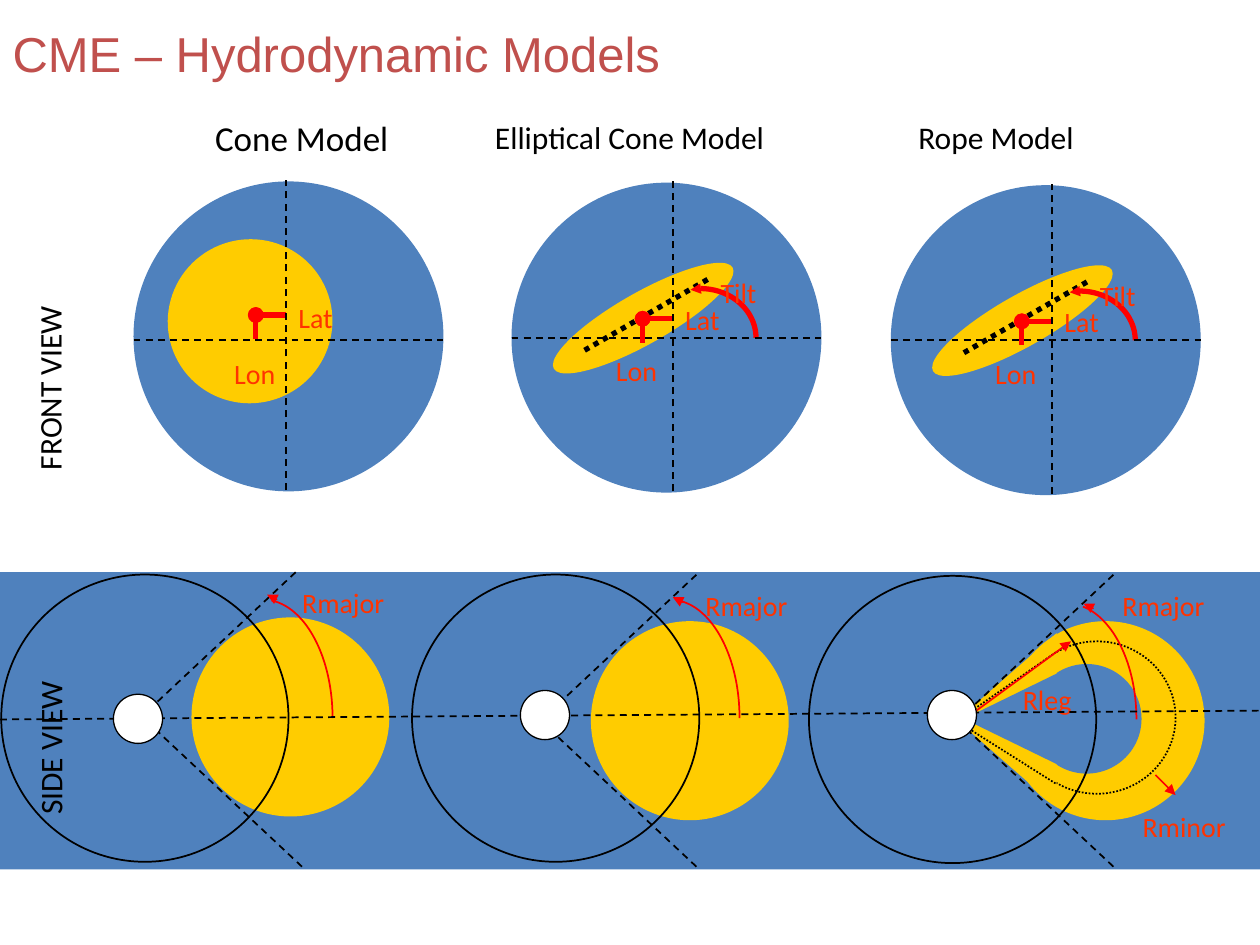
from lxml import etree
from pptx import Presentation
from pptx import util as u
from pptx.dml.color import RGBColor
from pptx.enum import dml, shapes, text
from pptx.oxml.ns import qn

BLUE, GOLD, RED, ORANGE = "4F81BD", "FFCC00", "FF0000", "FF3300"
BLACK, WHITE, BRICK = "000000", "FFFFFF", "C0504D"
DASH, DOTS = dml.MSO_LINE.DASH, dml.MSO_LINE.ROUND_DOT
KIND = shapes.MSO_SHAPE


def hue(code):
    return RGBColor.from_string(code)


def cm(*inches):
    """The layout grid is in inches; the slide gets its lengths in Cm."""
    return [u.Cm(2.54 * n) for n in inches]


class Board:
    font = "Calibri"

    def __init__(self, deck):
        self.slide = deck.slides.add_slide(deck.slide_layouts[5])
        self.items = self.slide.shapes

    def put(self, box, words, size, color, name=None, mid=False):
        frame = box.text_frame
        frame.word_wrap = True
        frame.vertical_anchor = (text.MSO_ANCHOR.MIDDLE if mid
                                 else text.MSO_ANCHOR.TOP)
        para = frame.paragraphs[0]
        para.alignment = text.PP_ALIGN.LEFT
        run = para.add_run()
        run.text = words
        style = {"size": u.Pt(size), "name": name or self.font, "bold": False}
        for key, value in style.items():
            setattr(run.font, key, value)
        run.font.color.rgb = hue(color)
        return para

    def title(self, words, *area):
        box = self.items.title
        for key, value in zip(("left", "top", "width", "height"), cm(*area)):
            setattr(box, key, value)
        self.put(box, words, 28, BRICK, "Arial", True)

    def label(self, words, x, y, w, h=0.3, size=16, color=ORANGE,
              turn=0, mid=False):
        box = self.items.add_textbox(*cm(x, y, w, h))
        box.rotation = turn
        return self.put(box, words, size, color, mid=mid)

    def stroke(self, line, color, width, dash=None):
        line.color.rgb = hue(color)
        line.width = u.Pt(width)
        if dash:
            line.dash_style = dash

    def shape(self, kind, x, y, w, h, fill=None, line=None, turn=0):
        item = self.items.add_shape(kind, *cm(x, y, w, h))
        item.shadow.inherit = False
        item.rotation = turn
        if fill:
            item.fill.solid()
            item.fill.fore_color.rgb = hue(fill)
        else:
            item.fill.background()
        if line:
            self.stroke(item.line, *line)
        else:
            item.line.fill.background()
        return item

    def disc(self, x, y, w, h=None, **look):
        return self.shape(KIND.OVAL, x, y, w, h or w, **look)

    def arc(self, x, y, rx, ry, start, width):
        """Arc around (x, y) from the start angle round to 3 o'clock."""
        item = self.shape(KIND.ARC, x - rx, y - ry, 2 * rx, 2 * ry,
                          line=(RED, width))
        item.adjustments[0] = 0.6 * start
        item.adjustments[1] = 0

    def line(self, x1, y1, x2, y2, color=BLACK, width=1, dash=None, tip=None):
        item = self.items.add_connector(shapes.MSO_CONNECTOR.STRAIGHT,
                                        *cm(x1, y1, x2, y2))
        self.stroke(item.line, color, width, dash)
        props = item._element.spPr
        if tip:
            etree.SubElement(props.find(qn("a:ln")), qn("a:tailEnd"), type=tip)
        etree.SubElement(props, qn("a:effectLst"))

    def arrow(self, x1, y1, x2, y2, width=0.75):
        self.line(x1, y1, x2, y2, RED, width, tip="triangle")


def front(b, x, y, mark_x, mark_y, tilt):
    """Front view: sun disc, ejecta, marker and axes."""
    b.disc(x, y, 2.46, fill=BLUE)
    if tilt:
        b.disc(x + 0.23, y + 0.87, 1.63, 0.41, fill=GOLD, turn=330.5)
        b.line(x + 0.58, y + 1.33, x + 1.57, y + 0.76, BLACK, 3, DOTS)
        b.arc(x + 1.5, y + 1.23, 0.44, 0.39, 270, 3)
        b.arrow(x + 1.51, y + 0.84, x + 1.42, y + 0.85)
        b.label("Tilt", x + 1.56, y + 0.69, 0.82)
    else:
        b.disc(x + 0.27, y + 0.46, 1.31, 1.3, fill=GOLD, turn=330.5)
    cross = mark_x + 0.24
    for end in ((mark_x, mark_y + 0.19), (cross, mark_y)):
        b.line(*end, mark_x, mark_y, RED, 3, tip="oval")
    mid = y + (1.23 if tilt else 1.26)
    b.label("Lon", mark_x - (0.31 if tilt else 0.27), mid + 0.08, 0.65)
    b.line(x, mid, x + 2.46, mid, dash=DASH)
    b.line(cross, y + 2.45, cross, y - 0.01, dash=DASH)
    b.label("Lat", cross, y + 0.9, 0.54)


def rope(b):
    """Hollow loop with two legs."""
    b.disc(8.19, 5.27, 0.87, fill=BLUE)
    b.disc(8.08, 5.09, 1.25, 1.21, line=(BLACK, 1, DOTS))
    b.shape(KIND.ISOSCELES_TRIANGLE, 7.3, 5.32, 1.38, 0.79, GOLD, turn=270)
    b.shape(KIND.ISOSCELES_TRIANGLE, 7.66, 5.3, 0.79, 0.81, BLUE, turn=270)
    b.line(7.6, 5.72, 8.39, 5.17, dash=DOTS)
    b.line(7.62, 5.74, 8.38, 6.22, dash=DOTS)
    b.arrow(7.64, 5.72, 8.5, 5.09, 1)
    b.arrow(9.17, 6.15, 9.33, 6.31, 1)
    b.label("Rleg", 8.02, 5.37, 0.76)
    b.label("Rminor", 8.97, 6.38, 0.99)


def side(b, ring, ball, apex, rise, arc, tag, loop=False):
    """Side view: ejecta, shell, cone edges and radius."""
    b.disc(*ball, 1.57, 1.58, fill=GOLD)
    if loop:
        rope(b)
    b.disc(*ring, 2.28, line=(BLACK, 1))
    b.line(apex, 5.72, apex + 1.26, 6.9, dash=DASH)
    b.line(apex + rise[0], 5.72 + rise[1],
           apex + rise[0] + 1.26, 4.54 + rise[1], dash=DASH)
    x, y, high, start, tip = arc
    b.arc(x, y, 0.55, high, start, 1)
    b.arrow(tip[0] + 0.08, tip[1] + 0.04, *tip)
    b.label("Rmajor", *tag, 0.99)


def main():
    deck = Presentation()
    deck.slide_width, deck.slide_height = cm(10, 7.5)
    b = Board(deck)

    # Headings
    b.title("CME – Hydrodynamic Models", 0, 0, 10, 0.84)
    head = b.label("Cone Model", 1.33, 0.78, 2.13, 0.62, 20, BLACK, mid=True)
    head.alignment = text.PP_ALIGN.CENTER
    for words, x, w in (("Elliptical Cone Model", 3.83, 2.82),
                        ("Rope Model", 7.19, 2.13)):
        b.label(words, x, 0.78, w, 0.62, 18, BLACK, mid=True)

    # Band and row names
    b.shape(KIND.RECTANGLE, 0, 4.54, 10, 2.36, BLUE)
    b.label("FRONT VIEW", -0.75, 2.49, 2.28, 0.4, 18, BLACK, 270)
    b.label("SIDE VIEW", -0.5, 5.47, 1.79, 0.4, 18, BLACK, 270)

    # Front views
    front(b, 1.06, 1.44, 2.03, 2.5, False)
    front(b, 4.06, 1.45, 5.1, 2.53, True)
    front(b, 7.07, 1.47, 8.11, 2.55, True)

    # Side views
    side(b, (0.01, 4.56), (1.52, 4.9), 1.16, (-0.05, -0.02),
         (2.09, 5.7, 0.94, 274, (2.12, 4.72)), (2.3, 4.6))
    side(b, (3.27, 4.56), (4.69, 4.93), 4.29, (0, 0),
         (5.32, 5.7, 0.94, 274, (5.34, 4.74)), (5.5, 4.62))
    side(b, (6.42, 4.57), (7.99, 4.93), 7.6, (0, 0),
         (8.47, 5.71, 0.92, 278, (8.6, 4.79)), (8.81, 4.62), True)

    # Common axis and suns
    b.line(0, 5.71, 10, 5.64, dash=DASH)
    for x, y in ((0.9, 5.51), (4.13, 5.48), (7.36, 5.48)):
        b.disc(x, y, 0.39, fill=WHITE, line=(BLACK, 0.75))

    deck.save("out.pptx")


if __name__ == "__main__":
    main()
